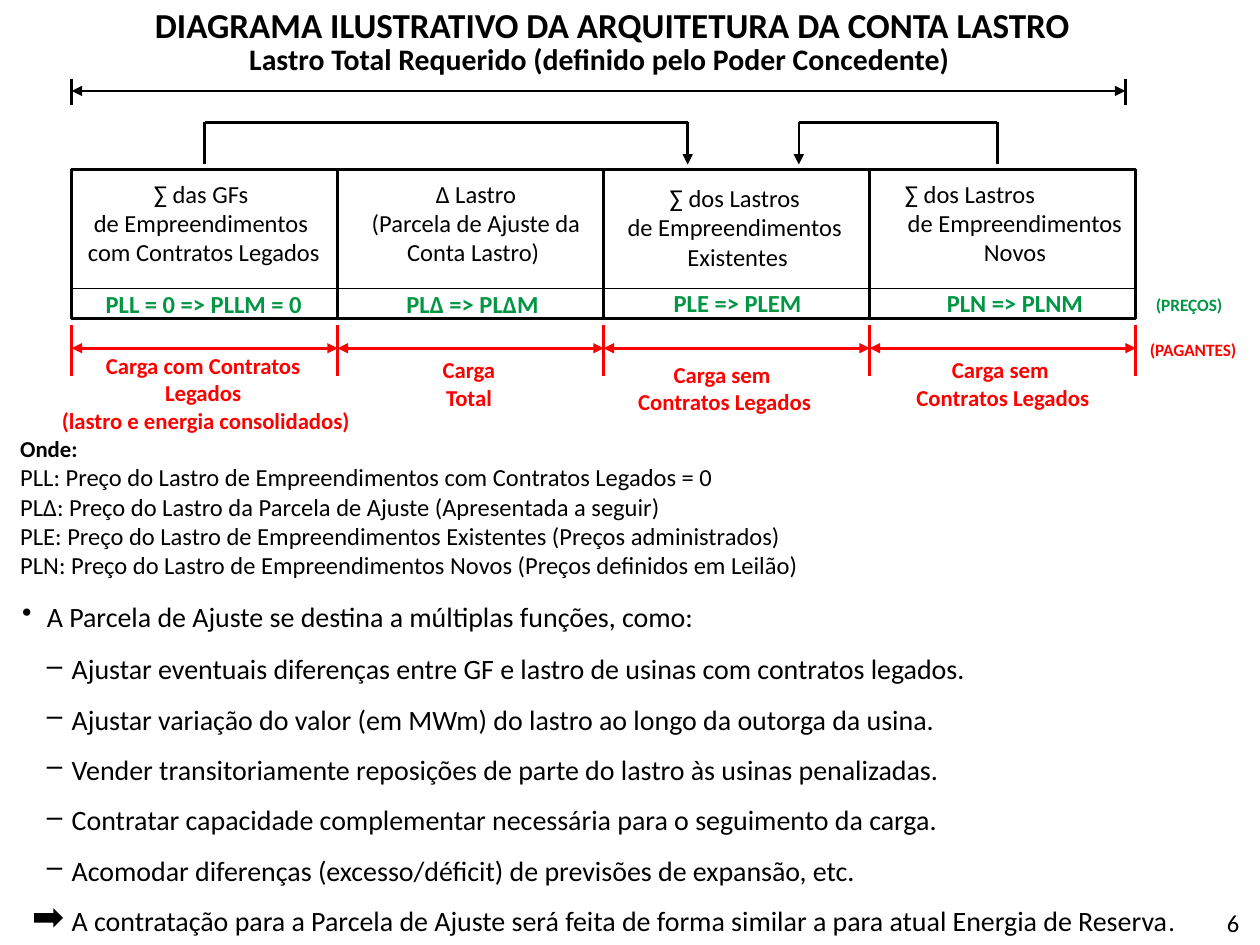
import pptx
import pptx.dml.color
import pptx.enum.shapes
import pptx.enum.text
import pptx.oxml.ns
import pptx.util
from lxml import etree

Pt = pptx.util.Pt
Align = pptx.enum.text.PP_ALIGN
Shape = pptx.enum.shapes.MSO_SHAPE
BLACK, RED, GREEN = "000000", "FF0000", "009644"
EDGES = [41 + 152 * i for i in range(5)]
TOP, HIGH = 97, 85


def color(code):
    return pptx.dml.color.RGBColor.from_string(code)


def child(node, tag, **attrs):
    return etree.SubElement(node, pptx.oxml.ns.qn(tag), attrs)


def line(slide, start, end, hue=BLACK, width=1.5, head=False, tail=False):
    item = slide.shapes.add_connector(
        pptx.enum.shapes.MSO_CONNECTOR.STRAIGHT,
        *(Pt(v) for v in (*start, *end)))
    item.line.color.rgb = color(hue)
    item.line.width = Pt(width)
    stroke = item.line._get_or_add_ln()
    for shown, tag in ((head, "a:headEnd"), (tail, "a:tailEnd")):
        if shown:
            child(stroke, tag, type="triangle")
    child(item._element.spPr, "a:effectLst")


def shape(slide, kind, area, fill=None):
    item = slide.shapes.add_shape(kind, *(Pt(v) for v in area))
    item.shadow.inherit = False
    if fill:
        item.fill.solid()
        item.fill.fore_color.rgb = color(fill)
        item.line.fill.background()
    else:
        item.fill.background()
        item.line.color.rgb = color(BLACK)
        item.line.width = Pt(1.5)


def frame(slide, area):
    text = slide.shapes.add_textbox(*(Pt(v) for v in area)).text_frame
    text.word_wrap = True
    text.auto_size = pptx.enum.text.MSO_AUTO_SIZE.SHAPE_TO_FIT_TEXT
    return text


def write(para, words, size, hue=BLACK, bold=False):
    run = para.add_run()
    run.text = words
    run.font.name = "Calibri"
    run.font.size = Pt(size)
    run.font.bold = bold
    run.font.color.rgb = color(hue)
    return run


def add(text, words, size, hue=BLACK, bold=False, align=Align.CENTER, gap=0):
    para = text.paragraphs[0]
    if para.runs:
        para = text.add_paragraph()
    para.alignment = align
    if gap:
        para.space_before = Pt(gap)
    write(para, words, size, hue, bold)
    return para


def indent(para, left, hang=0, mark=None):
    props = para._p.get_or_add_pPr()
    props.set("marL", str(Pt(left)))
    props.set("indent", str(Pt(-hang)))
    if mark:
        child(props, "a:buChar", char=mark)


def label(slide, area, rows, size, hue=BLACK, bold=True):
    text = frame(slide, area)
    for row in rows:
        add(text, row, size, hue, bold)
    return text


def span(slide):
    label(slide, (70.5, -1.5, 559, 31.5),
          ["DIAGRAMA ILUSTRATIVO DA ARQUITETURA DA CONTA LASTRO"], 20)
    label(slide, (120, 20, 445, 28),
          ["Lastro Total Requerido (definido pelo Poder Concedente)"], 17)
    for x in (41, 643):
        line(slide, (x, 45), (x, 60))
    line(slide, (41, 52), (643, 52), head=True, tail=True)
    for start, end in ((117, 393), (570, 456.5)):
        line(slide, (start, 94), (start, 70))
        line(slide, (start, 70), (end, 70))
        line(slide, (end, 70), (end, 94), tail=True)


def boxes(slide):
    for left, right in zip(EDGES, EDGES[1:]):
        shape(slide, Shape.RECTANGLE, (left, TOP, right - left, HIGH))
    line(slide, (EDGES[0], 165), (EDGES[-1], 165), width=0.75)

    label(slide, (193.5, 98.5, 157, 65),
          ["∆ Lastro", "(Parcela de Ajuste da Conta Lastro) "], 14, bold=False)
    label(slide, (200, 161.5, 140, 24), ["PL∆ => PL∆M"], 14, GREEN)
    cells = (
        ((35.5, 98.5, 162, 88),
         ["∑ das GFs ", "de Empreendimentos ", "com Contratos Legados"],
         "PLL = 0 => PLLM = 0", 12.8),
        ((351.5, 101, 140, 87),
         ["∑ dos Lastros ", "de Empreendimentos ", "Existentes"],
         "PLE => PLEM", 9.8),
        ((504, 98.5, 152, 87),
         ["∑ dos Lastros", "de Empreendimentos", "Novos"],
         "PLN => PLNM", 12.2),
    )
    for area, rows, price, gap in cells:
        text = label(slide, area, rows, 14, bold=False)
        add(text, price, 14, GREEN, True, gap=gap)
    first = text.paragraphs[0]
    first.alignment = Align.LEFT
    indent(first, 6)


def payers(slide):
    for x in EDGES:
        line(slide, (x, 186), (x, 215), RED)
    for left, right in zip(EDGES, EDGES[1:]):
        line(slide, (left, 199), (right, 199), RED, head=True, tail=True)
    free = ["Carga sem ", "Contratos Legados"]
    loads = (
        ((27.5, 197.5, 180, 55),
         ["Carga com Contratos ", "Legados ",
          "(lastro e energia consolidados)"]),
        ((211.5, 200, 113, 39), ["Carga", "Total"]),
        ((338.5, 202.5, 151, 39), free),
        ((497.5, 200, 151, 39), free),
    )
    for area, rows in loads:
        label(slide, area, rows, 13, RED)
    for area, word, hue in (((646, 162.5, 67, 28), "(PREÇOS)", GREEN),
                            ((643.5, 188.5, 76.5, 28), "(PAGANTES)", RED)):
        text = label(slide, area, [word], 17, hue)
        font = text.paragraphs[0].runs[0].font
        font._element.set("baseline", "30000")


def legend(slide):
    text = frame(slide, (4.5, 245, 690, 92))
    add(text, "Onde:", 13, bold=True, align=Align.LEFT)
    for row in (
        "PLL: Preço do Lastro de Empreendimentos com Contratos Legados = 0",
        "PL∆: Preço do Lastro da Parcela de Ajuste (Apresentada a seguir)",
        "PLE: Preço do Lastro de Empreendimentos Existentes (Preços administrados)",
        "PLN: Preço do Lastro de Empreendimentos Novos (Preços definidos em Leilão)",
    ):
        add(text, row, 14, align=Align.LEFT)


def goals(slide):
    text = frame(slide, (5.5, 339, 716, 202))
    para = add(text, "A Parcela de Ajuste se destina a múltiplas funções, como:",
               16, align=Align.JUSTIFY)
    indent(para, 14.2, 14.2, "•")
    rows = (
        "Ajustar eventuais diferenças entre GF e lastro de usinas com contratos legados.",
        "Ajustar variação do valor (em MWm) do lastro ao longo da outorga da usina.",
        "Vender transitoriamente reposições de parte do lastro às usinas penalizadas.",
        "Contratar capacidade complementar necessária para o seguimento da carga.",
        "Acomodar diferenças (excesso/déficit) de previsões de expansão, etc.",
        "A contratação para a Parcela de Ajuste será feita de forma similar a para atual Energia de Reserva",
    )
    for i, row in enumerate(rows):
        para = add(text, row, 16, align=Align.JUSTIFY, gap=0 if i else 1.2)
        para.level = 1
        para.line_spacing = 1.5
        if row == rows[-1]:
            indent(para, 28.4)
        else:
            indent(para, 28.4, 14.2, "–")
    write(para, ".", 15)
    shape(slide, Shape.RIGHT_ARROW, (19.5, 519, 16.5, 11), BLACK)


def main():
    deck = pptx.Presentation()
    deck.slide_width, deck.slide_height = Pt(720), Pt(540)
    slide = deck.slides.add_slide(deck.slide_layouts[6])
    span(slide)
    boxes(slide)
    payers(slide)
    legend(slide)
    goals(slide)
    add(frame(slide, (694, 515.5, 30, 24)), "6", 14, align=Align.LEFT)
    deck.save("out.pptx")


if __name__ == "__main__":
    main()
